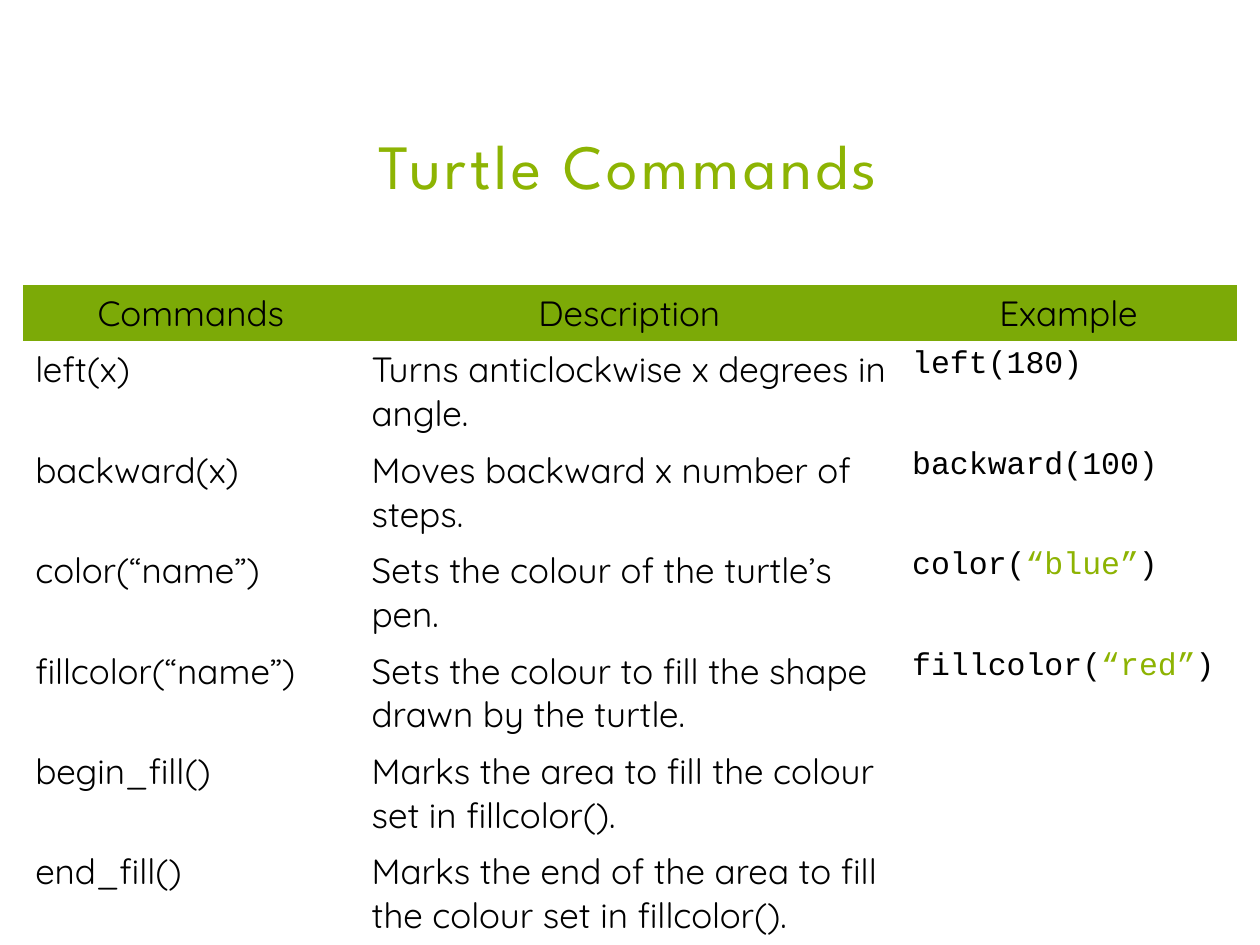
from pptx import Presentation
from pptx import util as u
from pptx.dml.color import RGBColor
from pptx.enum import text as t

LIME = RGBColor(0x8D, 0xB4, 0x03)
QUOTE = RGBColor(0x8D, 0xB3, 0x02)
GREEN = RGBColor(0x7C, 0xAA, 0x07)
BLACK = RGBColor(0, 0, 0)

TITLE = {"name": "League Spartan", "size": u.Pt(36), "bold": False}
BODY = {"name": "Quicksand", "size": u.Pt(20), "bold": False}
CODE = {"name": "Courier New", "size": u.Pt(18), "bold": False}

NO_GRID = "{2D5ABB26-0587-4C30-8999-92F81FD0307C}"
WIDTHS = (2.67, 4.29, 2.68)
HEADS = ("Commands", "Description", "Example")
ROWS = (
    ("left(x)", "Turns anticlockwise x degrees in angle.", ("left(180)",)),
    ("backward(x)", "Moves backward x number of steps.", ("backward(100)",)),
    ("color(“name”)", "Sets the colour of the turtle’s pen.",
     ("color(", "“blue”", ")")),
    ("fillcolor(“name”)",
     "Sets the colour to fill the shape drawn by the turtle.",
     ("fillcolor(", "“red”", ")")),
    ("begin_fill()", "Marks the area to fill the colour set in fillcolor().", ()),
    ("end_fill()",
     "Marks the end of the area to fill the colour set in fillcolor().", ()),
)


def add_run(para, words, style, color=BLACK):
    run = para.add_run()
    run.text = words
    for key, value in style.items():
        setattr(run.font, key, value)
    run.font.color.rgb = color
    return run


def set_title(slide, words):
    title = slide.shapes.title
    place = {"left": 0.17, "top": 0.88, "width": 9.63, "height": 1.38}
    for key, value in place.items():
        setattr(title, key, u.Inches(value))
    frame = title.text_frame
    form = {"word_wrap": True, "auto_size": t.MSO_AUTO_SIZE.NONE,
            "vertical_anchor": t.MSO_ANCHOR.TOP, "margin_top": u.Inches(0.19)}
    for key, value in form.items():
        setattr(frame, key, value)
    para = frame.paragraphs[0]
    para.alignment = t.PP_ALIGN.CENTER
    para.line_spacing = 0.9
    para.space_before = u.Pt(0)
    run = add_run(para, words, TITLE, LIME)
    run.font._element.set("spc", "200")


def fill_head(cell, words):
    cell.fill.solid()
    cell.fill.fore_color.rgb = GREEN
    para = cell.text_frame.paragraphs[0]
    para.alignment = t.PP_ALIGN.CENTER
    add_run(para, words, BODY)


def fill_row(cells, name, about, code):
    for cell in cells:
        cell.fill.background()
    paras = [cell.text_frame.paragraphs[0] for cell in cells]
    add_run(paras[0], name, BODY)
    add_run(paras[1], about, BODY)
    for part in code:
        add_run(paras[2], part, CODE, QUOTE if part.startswith("“") else BLACK)


def add_grid(slide):
    count = len(ROWS) + 1
    frame = slide.shapes.add_table(
        count, len(HEADS), u.Inches(0.18), u.Inches(2.26),
        u.Inches(sum(WIDTHS)), u.Inches(0.41 * count))
    table = frame.table
    table.first_row = table.horz_banding = False
    table._tbl.tblPr[0].text = NO_GRID
    for col, width in zip(table.columns, WIDTHS):
        col.width = u.Inches(width)
    head, *rest = table.rows
    for cell, words in zip(head.cells, HEADS):
        fill_head(cell, words)
    for row, data in zip(rest, ROWS):
        fill_row(list(row.cells), *data)


def main():
    deck = Presentation()
    deck.slide_width, deck.slide_height = u.Inches(10), u.Inches(7.5)
    slide = deck.slides.add_slide(deck.slide_layouts[5])
    set_title(slide, "Turtle Commands")
    add_grid(slide)
    deck.save("out.pptx")


if __name__ == "__main__":
    main()
